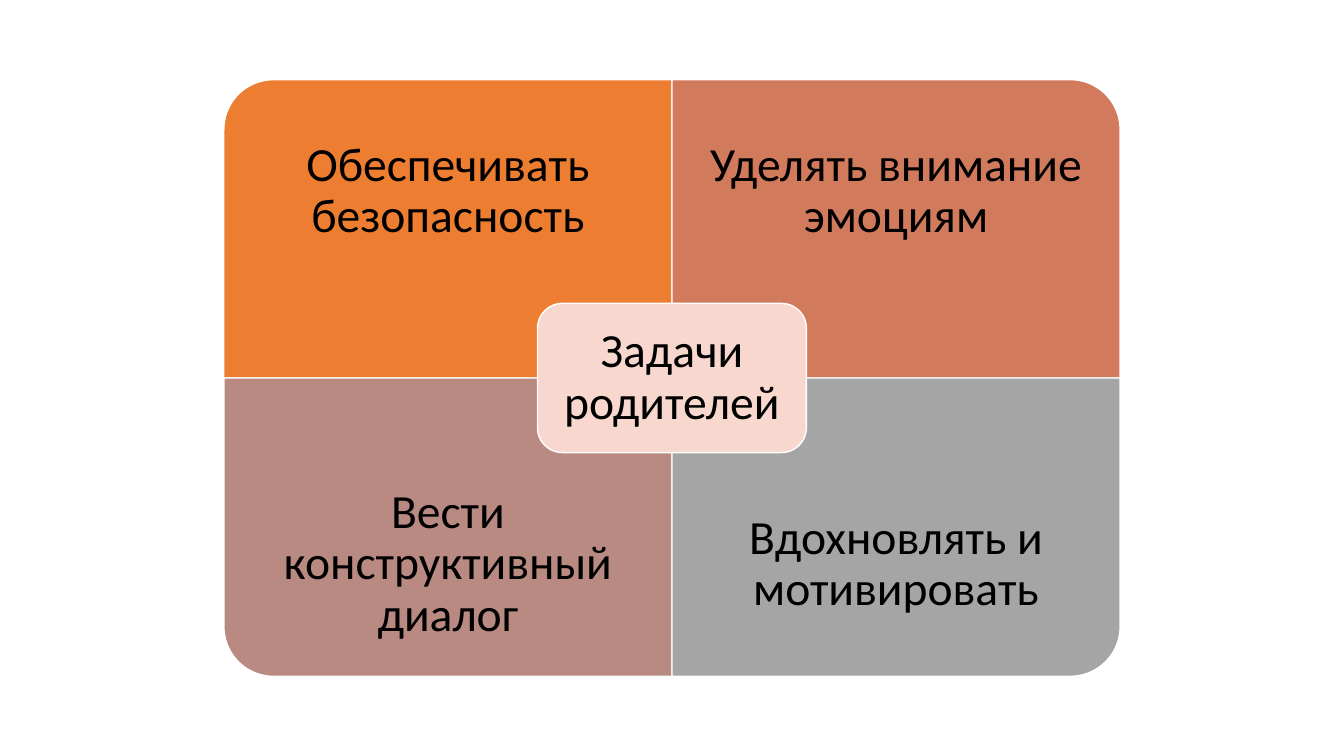
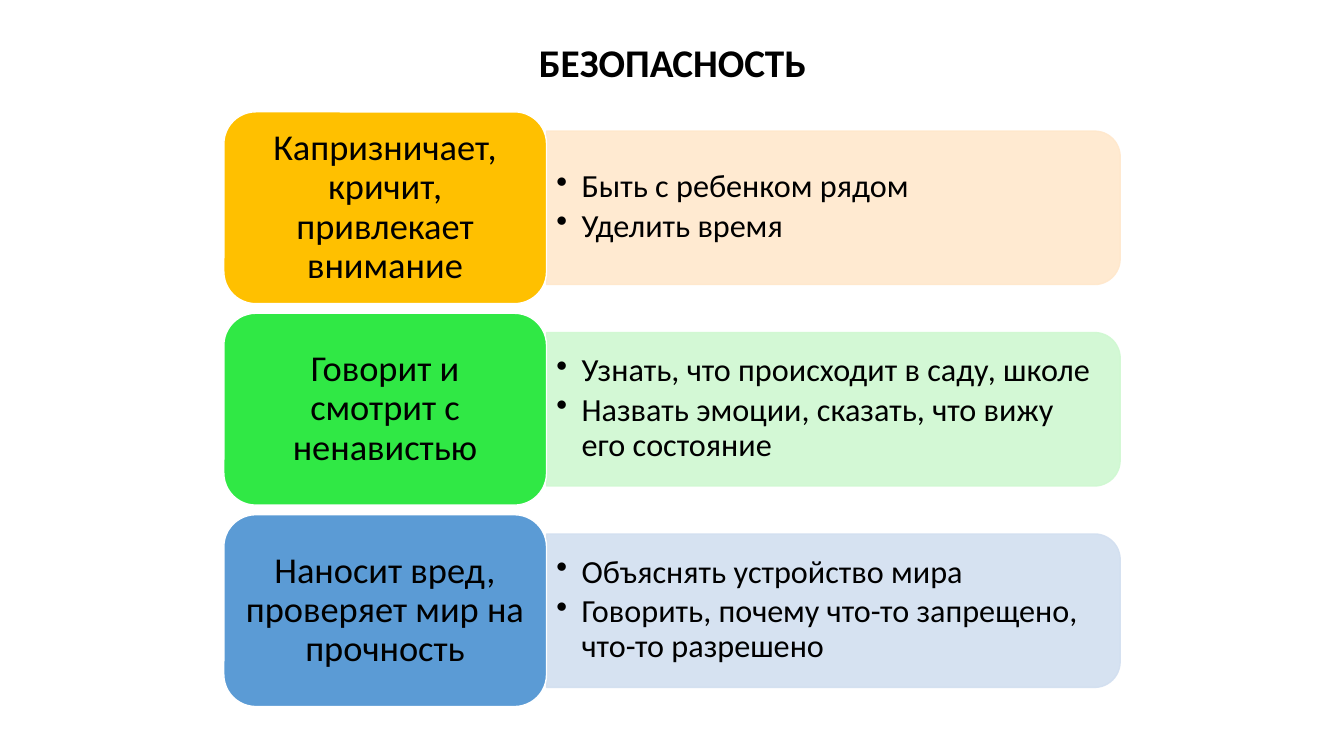
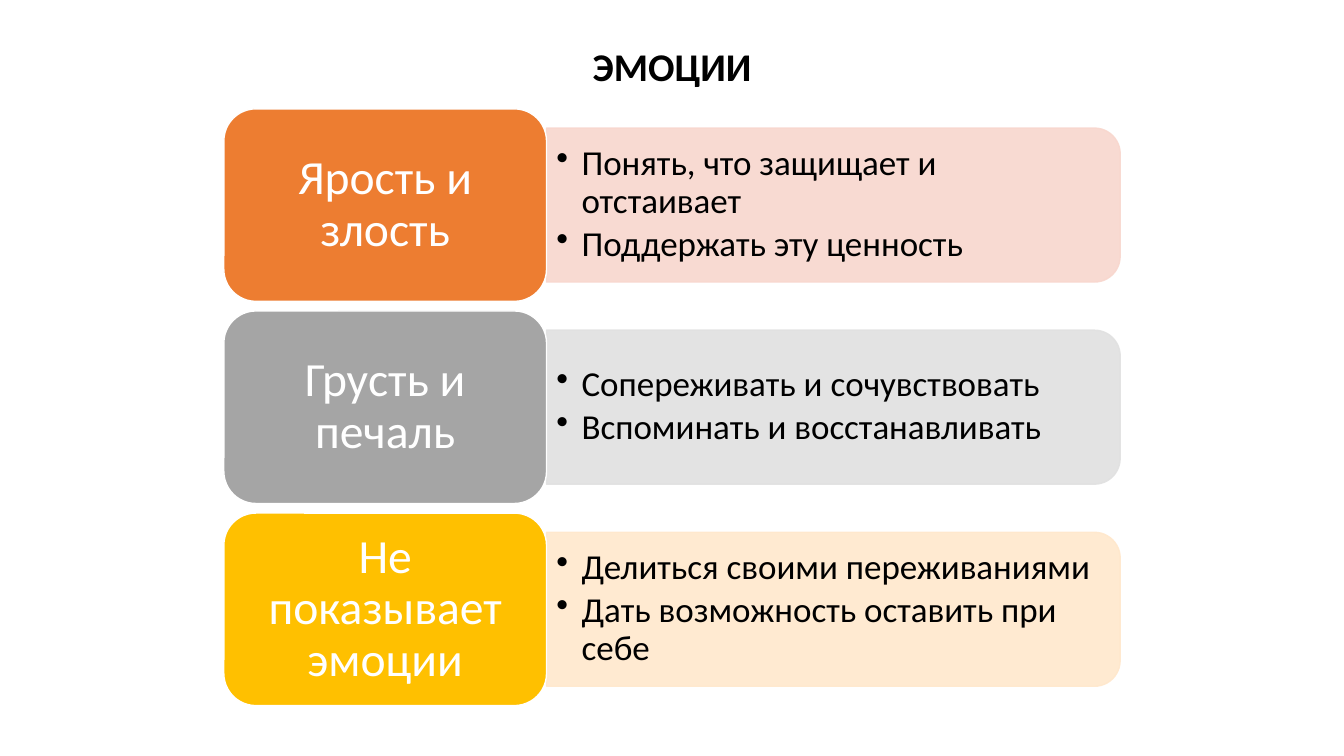
from lxml import etree
from pptx import Presentation
from pptx.dml.color import RGBColor
from pptx.enum.shapes import MSO_SHAPE
from pptx.enum.text import MSO_ANCHOR, MSO_AUTO_SIZE, PP_ALIGN
from pptx.oxml.ns import qn
from pptx.util import Pt

PX = 9144  # one px is 0.01 inch
SLIDE_W, SLIDE_H = 1333, 750
TITLE_ONLY, BLANK = 5, 6

CORNER = MSO_SHAPE.ROUND_1_RECTANGLE
ROUNDED = MSO_SHAPE.ROUNDED_RECTANGLE
TWO_CORNERS = MSO_SHAPE.ROUND_2_SAME_RECTANGLE
TOP, MIDDLE = MSO_ANCHOR.TOP, MSO_ANCHOR.MIDDLE
LEFT, CENTER = PP_ALIGN.LEFT, PP_ALIGN.CENTER
NO_FIT = MSO_AUTO_SIZE.NONE

FONT = "Calibri"
BLACK, WHITE = "000000", "FFFFFF"
ORANGE, GREY, GOLD = "ED7D31", "A5A5A5", "FFC000"
PALE_ROSE, PALE_GOLD = "F8D7CE", "FFE8CC"

TASKS = [  # text, fill, rotation that turns the round corner outwards
    ("Обеспечивать безопасность", ORANGE, 270),
    ("Уделять внимание эмоциям", "D17B5C", 0),
    ("Вести конструктивный диалог", "B98A82", 180),
    ("Вдохновлять и мотивировать", GREY, 90),
]
SAFETY = [  # label, label fill, panel fill, bullets
    ("Капризничает, кричит, привлекает внимание", GOLD, PALE_GOLD,
     ["Быть с ребенком рядом", "Уделить время"]),
    ("Говорит и смотрит с ненавистью", "30E845", "CFF8D1",
     ["Узнать, что происходит в саду, школе",
      "Назвать эмоции, сказать, что вижу его состояние"]),
    ("Наносит вред, проверяет мир на прочность", "5B9BD5", "D2DFF0",
     ["Объяснять устройство мира",
      "Говорить, почему что-то запрещено, что-то разрешено"]),
]
EMOTIONS = [
    ("Ярость и злость", ORANGE, PALE_ROSE,
     ["Понять, что защищает и отстаивает", "Поддержать эту ценность"]),
    ("Грусть и печаль", GREY, "E1E1E1",
     ["Сопереживать и сочувствовать", "Вспоминать и восстанавливать"]),
    ("Не показывает эмоции", GOLD, PALE_GOLD,
     ["Делиться своими переживаниями", "Дать возможность оставить при себе"]),
]
SAFETY_STYLE = {"label_size": 26, "label_color": BLACK,
                "label_inset": (11, 5), "bullet_size": 23}
EMOTION_STYLE = {"label_size": 34, "label_color": WHITE,
                 "label_inset": (14, 7), "bullet_size": 25}


def emu(box):
    return [round(length * PX) for length in box]


def rgb(color):
    return RGBColor.from_string(color)


def apply(target, values):
    for name, value in values.items():
        setattr(target, name, value)


def write(shape, lines, size, color=BLACK, inset=(10, 5), anchor=MIDDLE,
          align=CENTER, spacing=0.9, bold=False, wrap=True, bullets=False):
    frame = shape.text_frame
    across, down = emu(inset)
    apply(frame, {"margin_left": across, "margin_right": across,
                  "margin_top": down, "margin_bottom": down,
                  "vertical_anchor": anchor, "word_wrap": wrap,
                  "auto_size": NO_FIT})
    for index, line in enumerate(lines):
        para = frame.add_paragraph() if index else frame.paragraphs[0]
        apply(para, {"alignment": align, "line_spacing": spacing})
        span = para.add_run()
        span.text = line
        apply(span.font, {"name": FONT, "size": Pt(size), "bold": bold})
        span.font.color.rgb = rgb(color)
        if bullets:
            add_bullet(para, size)


def add_bullet(para, size):
    para.space_after = Pt(size * 0.15)
    properties = para._p.get_or_add_pPr()
    properties.set("marL", str(25 * PX))
    properties.set("indent", str(-25 * PX))
    etree.SubElement(properties, qn("a:buChar")).set("char", "•")


def add_block(page, kind, box, fill, line=WHITE, rotation=0):
    """Place a shape so that it covers the box after its rotation."""
    left, top, width, height = box
    if rotation % 180:
        shift = (width - height) / 2
        left, top, width, height = left + shift, top - shift, height, width
    block = page.shapes.add_shape(kind, *emu((left, top, width, height)))
    block.rotation = rotation
    block.shadow.inherit = False
    block.fill.solid()
    block.fill.fore_color.rgb = rgb(fill)
    block.line.color.rgb = rgb(line)
    block.line.width = Pt(1)
    return block


def make_translucent(block, percent):
    for color in block._element.spPr.iter(qn("a:srgbClr")):
        etree.SubElement(color, qn("a:alpha")).set("val", str(percent * 1000))


def add_title(page, text, box):
    title = page.shapes.title
    apply(title, dict(zip(("left", "top", "width", "height"), emu(box))))
    write(title, [text], 28, anchor=TOP, spacing=1.0, bold=True, wrap=False)


def add_matrix(page, box, center_text, tasks):
    left, top, width, height = box
    cell_w, cell_h = width / 2, height / 2
    text_h = cell_h * 0.75
    # Four quadrants, each with its text towards the outer edge
    for index, (text, fill, rotation) in enumerate(tasks):
        row, column = divmod(index, 2)
        x, y = left + column * cell_w, top + row * cell_h
        add_block(page, CORNER, (x, y, cell_w, cell_h), fill, rotation=rotation)
        text_y = y + row * (cell_h - text_h)
        text_box = page.shapes.add_textbox(*emu((x, text_y, cell_w, text_h)))
        write(text_box, [text], 34, inset=(26, 26))
    # Center label
    center_w, center_h = cell_w * 0.6, cell_h * 0.5
    center = add_block(page, ROUNDED, (left + cell_w - center_w / 2,
                                       top + cell_h - center_h / 2,
                                       center_w, center_h), PALE_ROSE)
    write(center, [center_text], 34, inset=(14, 14))


def add_row(page, box, row, style):
    left, top, width, height = box
    label_text, label_fill, panel_fill, bullets = row
    label_w = width * 0.36
    panel_x, panel_y = left + label_w, top + height * 0.1
    panel_w, panel_h = width - label_w, height * 0.8
    # Panel with bullets
    panel = add_block(page, TWO_CORNERS, (panel_x, panel_y, panel_w, panel_h),
                      panel_fill, line=panel_fill, rotation=90)
    make_translucent(panel, 90)
    text_box = page.shapes.add_textbox(
        *emu((panel_x, panel_y + 7, panel_w - 8, panel_h - 15)))
    write(text_box, bullets, style["bullet_size"], align=LEFT, bullets=True)
    # Label
    label = add_block(page, ROUNDED, (left, top, label_w, height), label_fill)
    write(label, [label_text], style["label_size"], style["label_color"],
          style["label_inset"])


def add_list_slide(deck, title, title_box, box, rows, style):
    page = deck.slides.add_slide(deck.slide_layouts[TITLE_ONLY])
    add_title(page, title, title_box)
    left, top, width, height = box
    gap = 0.05  # share of a row's height
    row_h = height / (len(rows) + gap * (len(rows) - 1))
    for index, row in enumerate(rows):
        y = top + index * row_h * (1 + gap)
        add_row(page, (left, y, width, row_h), row, style)


def main():
    deck = Presentation()
    deck.slide_width, deck.slide_height = emu((SLIDE_W, SLIDE_H))
    page = deck.slides.add_slide(deck.slide_layouts[BLANK])
    add_matrix(page, (222, 79, 889, 592), "Задачи родителей", TASKS)
    add_list_slide(deck, "БЕЗОПАСНОСТЬ", (523, 33, 288, 57),
                   (222, 111, 889, 590), SAFETY, SAFETY_STYLE)
    add_list_slide(deck, "ЭМОЦИИ", (577, 37, 179, 57),
                   (222, 108, 889, 592), EMOTIONS, EMOTION_STYLE)
    deck.save("out.pptx")


if __name__ == "__main__":
    main()
